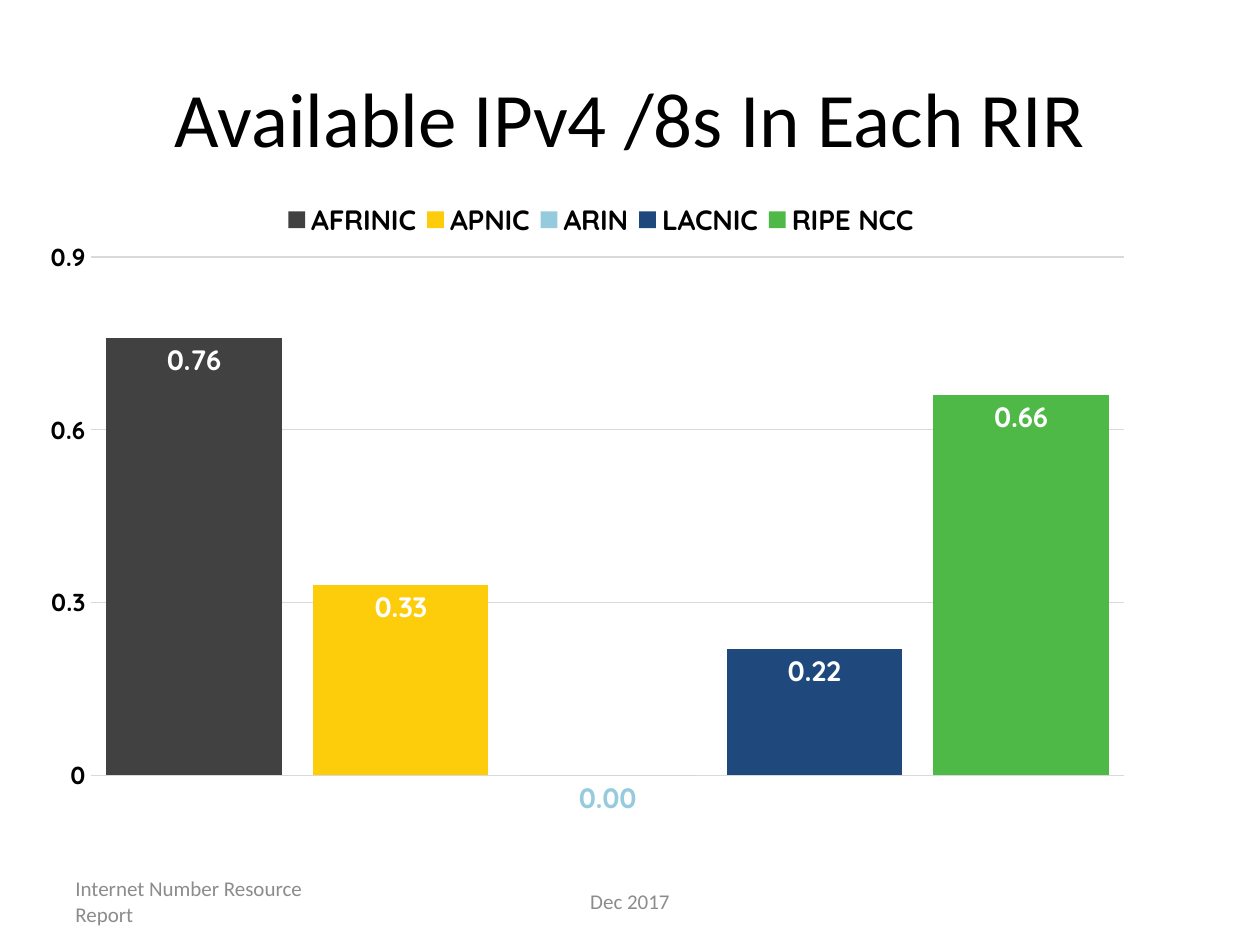
from dataclasses import dataclass

import pptx
import pptx.chart.data
import pptx.dml.color
import pptx.enum.chart
import pptx.enum.text
import pptx.util
from lxml import etree
from pptx.oxml.ns import qn

Pt = pptx.util.Pt
Align = pptx.enum.text.PP_ALIGN
Spot = pptx.enum.chart.XL_LABEL_POSITION

HEX = {
    "black": "000000", "white": "FFFFFF", "grey": "8C8C8C", "grid": "D9D9D9",
    "coal": "414141", "gold": "FDCC0B", "sky": "96CBDD",
    "navy": "1F497D", "green": "4FB948",
}


@dataclass
class Bar:
    name: str
    value: float
    color: str


@dataclass
class Note:
    text: str
    left: float
    width: float
    align: Align


BARS = [
    Bar("AFRINIC", 0.76, "coal"),
    Bar("APNIC", 0.33, "gold"),
    Bar("ARIN", 0, "sky"),
    Bar("LACNIC", 0.22, "navy"),
    Bar("RIPE NCC", 0.66, "green"),
]
NOTES = [
    Note("Internet Number Resource Report", 36, 168, Align.LEFT),
    Note("Dec 2017", 246, 228, Align.CENTER),
]


def rgb(key: str) -> pptx.dml.color.RGBColor:
    return pptx.dml.color.RGBColor.from_string(HEX[key])


def style(font, face: str, size: float, color: str, bold: bool = False) -> None:
    font.name, font.size, font.bold = face, Pt(size), bold
    font.color.rgb = rgb(color)


def write(shape, text: str, size: float, color: str, align: Align) -> None:
    frame = shape.text_frame
    frame.word_wrap = True
    frame.vertical_anchor = pptx.enum.text.MSO_ANCHOR.MIDDLE
    para = frame.paragraphs[0]
    para.alignment = align
    run = para.add_run()
    run.text = text
    style(run.font, "Calibri", size, color)


def layout(host, index: int, inner: bool, box: tuple) -> None:
    """Place a chart part by fractions of the chart area."""
    for old in host.findall(qn("c:layout")):
        host.remove(old)
    node = etree.Element(qn("c:layout"))
    host.insert(index, node)
    manual = etree.SubElement(node, qn("c:manualLayout"))
    pairs = [("layoutTarget", "inner")] if inner else []
    pairs += [("xMode", "edge"), ("yMode", "edge")]
    pairs += zip("xywh", box)
    for tag, value in pairs:
        etree.SubElement(manual, qn("c:" + tag)).set("val", str(value))


def draw_chart(slide) -> None:
    data = pptx.chart.data.CategoryChartData(number_format="0.00")
    data.categories = [bar.name for bar in BARS]
    data.add_series("Series 1", [bar.value for bar in BARS])
    kind = pptx.enum.chart.XL_CHART_TYPE.COLUMN_CLUSTERED
    chart = slide.shapes.add_chart(
        kind, Pt(18), Pt(108), Pt(638), Pt(392.5), data).chart
    chart.has_title = False
    style(chart.font, "Quicksand", 10, "black", True)

    # Axes
    chart.category_axis.visible = False
    axis = chart.value_axis
    axis.minimum_scale, axis.maximum_scale, axis.major_unit = 0, 0.9, 0.3
    axis.major_tick_mark = pptx.enum.chart.XL_TICK_MARK.NONE
    axis.format.line.fill.background()
    style(axis.tick_labels.font, "Quicksand", 14, "black", True)
    axis.tick_labels.number_format = "General"
    axis.tick_labels.number_format_is_linked = False
    line = axis.major_gridlines.format.line
    line.color.rgb, line.width = rgb("grid"), Pt(0.75)

    # Legend and plot area
    chart.has_legend = True
    legend = chart.legend
    legend.position = pptx.enum.chart.XL_LEGEND_POSITION.BOTTOM
    legend.include_in_layout = False
    style(legend.font, "Quicksand", 16, "black", True)
    root = chart.element
    layout(root.find(".//" + qn("c:legend")), 1, False, (0.22, 0.01, 0.58, 0.07))
    layout(root.find(".//" + qn("c:plotArea")), 0, True,
           (0.053, 0.099, 0.926, 0.755))

    # Bars and labels
    plot = chart.plots[0]
    plot.vary_by_categories = True
    plot.gap_width, plot.overlap = 18, -27
    row = plot.series[0]
    row.invert_if_negative = False
    tags = row.data_labels
    tags.show_value = True
    tags.position = Spot.INSIDE_END
    tags.number_format, tags.number_format_is_linked = "0.00", False
    style(tags.font, "Quicksand", 16, "white", True)
    for i, bar in enumerate(BARS):
        point = row.points[i]
        point.format.fill.solid()
        point.format.fill.fore_color.rgb = rgb(bar.color)
        if not bar.value:
            style(point.data_label.font, "Quicksand", 16, bar.color, True)
            point.data_label.position = Spot.INSIDE_END


def main() -> None:
    deck = pptx.Presentation()
    deck.slide_width, deck.slide_height = Pt(720), Pt(540)
    slide = deck.slides.add_slide(deck.slide_layouts[5])

    # Title
    title = slide.shapes.title
    title.left, title.top, title.width, title.height = map(
        Pt, (36, 21.6, 648, 90))
    write(title, "Available IPv4 /8s In Each RIR", 44, "black", Align.CENTER)

    draw_chart(slide)

    # Footer
    for note in NOTES:
        box = slide.shapes.add_textbox(
            Pt(note.left), Pt(500.5), Pt(note.width), Pt(28.8))
        write(box, note.text, 12, "grey", note.align)

    deck.save("out.pptx")


if __name__ == "__main__":
    main()
